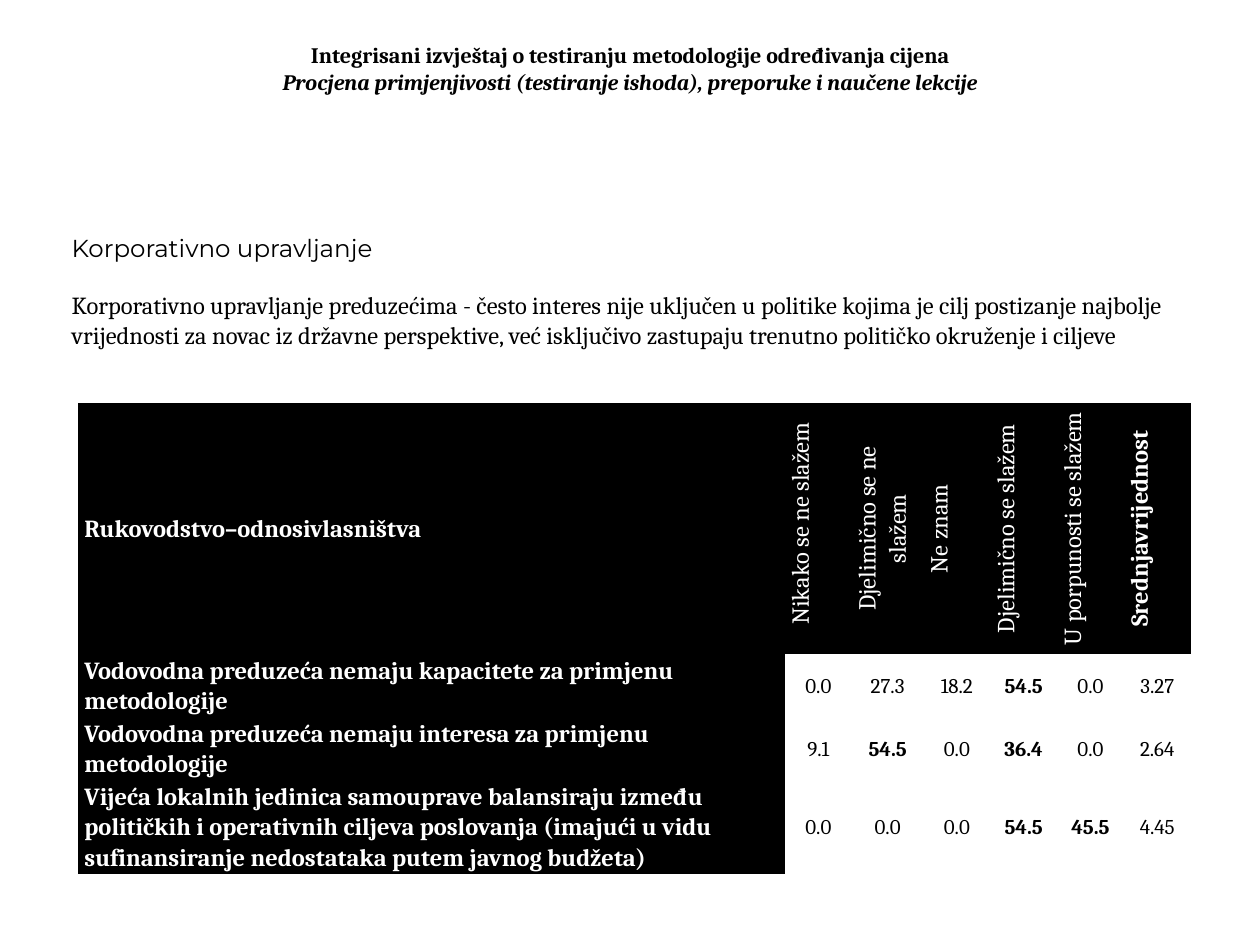
from dataclasses import dataclass

from pptx import Presentation
from pptx.dml.color import RGBColor
from pptx.enum.text import MSO_ANCHOR, PP_ALIGN
from pptx.oxml.ns import qn
from pptx.util import Inches, Pt

LEFT, CENTER = PP_ALIGN.LEFT, PP_ALIGN.CENTER
TOP, MIDDLE = MSO_ANCHOR.TOP, MSO_ANCHOR.MIDDLE
COLORS = {"black": "000000", "white": "FFFFFF"}
PLAIN_TABLE_STYLE = "{2D5ABB26-0587-4C30-8999-92F81FD0307C}"
COLUMN_WIDTHS = [5.61, 0.53, 0.57, 0.53, 0.53, 0.53, 0.53]
ROW_HEIGHTS = [1.99, 0.48, 0.48, 0.72]
CELL_FORMAT = {
    "vertical_anchor": MIDDLE,
    "margin_left": Inches(0.05),
    "margin_right": Inches(0.05),
    "margin_top": 0,
    "margin_bottom": 0,
}


@dataclass
class TextStyle:
    size: float
    color: str = "black"
    bold: bool = False
    italic: bool = False
    font: str = "Cambria"


@dataclass
class SurveyRow:
    statement: str
    values: list[str]
    bold_columns: tuple[int, ...]


HEADINGS = [
    "Nikako se ne slažem",
    "Djelimično se ne slažem",
    "Ne znam",
    "Djelimično se slažem",
    "U porpunosti se slažem",
    "Srednjavrijednost",
]
SURVEY_ROWS = [
    SurveyRow(
        "Vodovodna preduzeća nemaju kapacitete za primjenu metodologije",
        ["0.0", "27.3", "18.2", "54.5", "0.0", "3.27"],
        (4,),
    ),
    SurveyRow(
        "Vodovodna preduzeća nemaju interesa za primjenu metodologije",
        ["9.1", "54.5", "0.0", "36.4", "0.0", "2.64"],
        (2, 4),
    ),
    SurveyRow(
        "Vijeća lokalnih jedinica samouprave balansiraju između političkih i operativnih "
        "ciljeva poslovanja (imajući u vidu sufinansiranje nedostataka putem javnog budžeta)",
        ["0.0", "0.0", "0.0", "54.5", "45.5", "4.45"],
        (4, 5),
    ),
]


def apply_format(target, values: dict) -> None:
    """Set every named attribute on the target."""
    for name, value in values.items():
        setattr(target, name, value)


def add_span(para, text: str, style: TextStyle) -> None:
    """Add a styled run to a paragraph."""
    span = para.add_run()
    span.text = text
    apply_format(span.font, {
        "name": style.font, "size": Pt(style.size),
        "bold": style.bold, "italic": style.italic,
    })
    span.font.color.rgb = RGBColor.from_string(COLORS[style.color])


def add_box(page, left: float, top: float, width: float, height: float, anchor):
    """Add a wrapping text box and return its text frame."""
    box = page.shapes.add_textbox(Inches(left), Inches(top), Inches(width), Inches(height))
    apply_format(box.text_frame, {"word_wrap": True, "vertical_anchor": anchor})
    return box.text_frame


def fill_cell(cell, text: str, style: TextStyle, alignment, vertical: bool = False) -> None:
    """Write a table cell, dark behind white text and clear otherwise."""
    apply_format(cell, CELL_FORMAT)
    if style.color == "white":
        cell.fill.solid()
        cell.fill.fore_color.rgb = RGBColor.from_string(COLORS["black"])
    else:
        cell.fill.background()
    if vertical:
        cell._tc.get_or_add_tcPr().set("vert", "vert270")
    para = cell.text_frame.paragraphs[0]
    apply_format(para, {"alignment": alignment, "line_spacing": 1.07})
    add_span(para, text, style)


def add_title(page) -> None:
    """Add the report title and its subtitle."""
    para = add_box(page, 0.5, 0.3, 9, 0.48, MIDDLE).paragraphs[0]
    para.alignment = CENTER
    add_span(para, "Integrisani izvještaj o testiranju metodologije određivanja cijena",
             TextStyle(12.6, bold=True))
    para.add_line_break()
    add_span(para, "Procjena primjenjivosti (testiranje ishoda), preporuke i naučene lekcije",
             TextStyle(12.6, bold=True, italic=True))


def add_introduction(page) -> None:
    """Add the section heading and the paragraph below it."""
    frame = add_box(page, 0.47, 1.8, 8.98, 5.16, TOP)
    add_span(frame.paragraphs[0], "Korporativno upravljanje", TextStyle(14, font="Montserrat"))
    para = frame.add_paragraph()
    para.space_before = Pt(16)
    add_span(
        para,
        "Korporativno upravljanje preduzećima - često interes nije uključen u politike kojima "
        "je cilj postizanje najbolje vrijednosti za novac iz državne perspektive, već "
        "isključivo zastupaju trenutno političko okruženje i ciljeve",
        TextStyle(14),
    )


def add_survey_table(page) -> None:
    """Add the table of survey answers."""
    frame = page.shapes.add_table(
        len(ROW_HEIGHTS), len(COLUMN_WIDTHS), Inches(0.62), Inches(3.2),
        Inches(sum(COLUMN_WIDTHS)), Inches(sum(ROW_HEIGHTS)),
    )
    table = frame.table
    apply_format(table, {"first_row": False, "horz_banding": False})
    next(frame._element.iter(qn("a:tableStyleId"))).text = PLAIN_TABLE_STYLE
    for column, width in zip(table.columns, COLUMN_WIDTHS):
        column.width = Inches(width)
    for row, height in zip(table.rows, ROW_HEIGHTS):
        row.height = Inches(height)

    label_style = TextStyle(14, "white", bold=True)
    fill_cell(table.cell(0, 0), "Rukovodstvo–odnosivlasništva", label_style, LEFT)
    for index, heading in enumerate(HEADINGS, 1):
        style = TextStyle(14, "white", bold=index == len(HEADINGS))
        fill_cell(table.cell(0, index), heading, style, CENTER, vertical=True)
    first_heading = table.cell(0, 1).text_frame.paragraphs[0]
    first_heading._p.get_or_add_pPr().set("marL", str(Inches(0.08)))

    for row_index, survey_row in enumerate(SURVEY_ROWS, 1):
        fill_cell(table.cell(row_index, 0), survey_row.statement, label_style, LEFT)
        for index, value in enumerate(survey_row.values, 1):
            style = TextStyle(12, bold=index in survey_row.bold_columns)
            fill_cell(table.cell(row_index, index), value, style, CENTER)


def main() -> None:
    """Build the slide and save the deck."""
    deck = Presentation()
    apply_format(deck, {"slide_width": Inches(10), "slide_height": Inches(7.5)})
    page = deck.slides.add_slide(deck.slide_layouts[6])
    add_title(page)
    add_introduction(page)
    add_survey_table(page)
    deck.save("out.pptx")


if __name__ == "__main__":
    main()
